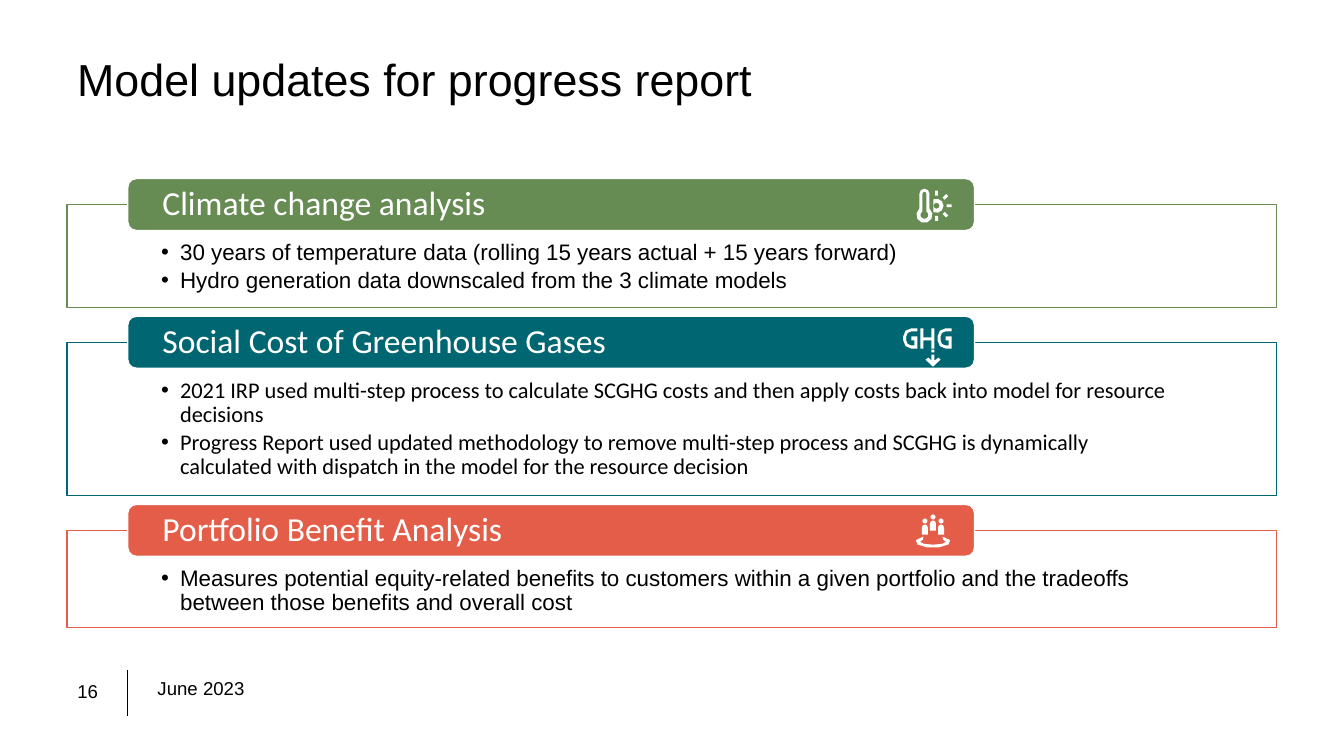
from dataclasses import dataclass
from math import acos, ceil, cos, degrees, radians, sin
from typing import Callable

import pptx
import pptx.dml.color
import pptx.enum.shapes
import pptx.enum.text
import pptx.oxml.ns
import pptx.presentation
import pptx.shapes.autoshape
import pptx.slide
import pptx.util
from lxml import etree

Cm, Pt = pptx.util.Cm, pptx.util.Pt
KIND = pptx.enum.shapes.MSO_SHAPE
ANCHOR = pptx.enum.text.MSO_ANCHOR
LEFT = pptx.enum.text.PP_ALIGN.LEFT
Dots = list[tuple[float, float]]
WHITE, BLACK = "FFFFFF", "000000"

SIDE, WIDE = 1.69, 30.48      # left edge and width of title and frames
TOP, GAP = 5.16, 0.88         # first frame, space between frames
BAR_X, BAR_W, BAR_H = 3.22, 21.34, 1.31
RISE = 0.66                   # how far a bar stands above its frame
ICON_X, UNIT = 23.5, 0.0254   # icon axis, size of one icon step


def color(code: str) -> pptx.dml.color.RGBColor:
    return pptx.dml.color.RGBColor.from_string(code)


def paint(shape: pptx.shapes.autoshape.Shape, fill: str = "", line: str = "") -> None:
    shape.shadow.inherit = False
    if fill:
        shape.fill.solid()
        shape.fill.fore_color.rgb = color(fill)
    else:
        shape.fill.background()
    if line:
        shape.line.color.rgb = color(line)
        shape.line.width = Pt(1)
    else:
        shape.line.fill.background()


def write(shape: pptx.shapes.autoshape.Shape, text: str, size: float, font: str = "Arial",
          ink: str = BLACK, dots: bool = False, after: float = 0, space: float = 0.9) -> None:
    frame = shape.text_frame
    frame.word_wrap = True
    frame.text = text
    for para in frame.paragraphs:
        if dots:
            props = para._p.get_or_add_pPr()
            props.set("marL", str(Cm(0.48)))
            props.set("indent", str(-Cm(0.48)))
            etree.SubElement(props, pptx.oxml.ns.qn("a:buFont")).set("typeface", "Arial")
            etree.SubElement(props, pptx.oxml.ns.qn("a:buChar")).set("char", "•")
        para.alignment = LEFT
        para.line_spacing = space
        para.space_after = Pt(after)
        for run in para.runs:
            run.font.size = Pt(size)
            run.font.name = font
            run.font.color.rgb = color(ink)


def inset(shape: pptx.shapes.autoshape.Shape, side: float, top: float, base: float) -> None:
    frame = shape.text_frame
    frame.margin_left = frame.margin_right = Cm(side)
    frame.margin_top, frame.margin_bottom = Cm(top), Cm(base)


# Icon tools: places are icon steps from the icon axis and the bar top
def arc(x: float, y: float, wide: float, high: float, start: float, end: float) -> Dots:
    count = ceil(abs(end - start) / 45)
    turns = [radians(start + (end - start) * i / count) for i in range(count + 1)]
    return [(x + wide * cos(t), y + high * sin(t)) for t in turns]


@dataclass
class Pen:
    slide: pptx.slide.Slide
    top: float

    def form(self, *loops: Dots) -> None:
        paths = [[(Cm(ICON_X + x * UNIT), Cm(self.top + y * UNIT)) for x, y in loop]
                 for loop in loops]
        build = self.slide.shapes.build_freeform(*paths[0][0])
        for i, corners in enumerate(paths):
            if i:
                build.move_to(*corners[0])
            build.add_line_segments(corners[1:], close=True)
        paint(build.convert_to_shape(), WHITE)

    def block(self, kind: KIND, x: float, y: float, wide: float, high: float,
              turn: float = 0) -> None:
        """Place a preset shape by its centre."""
        shape = self.slide.shapes.add_shape(
            kind, Cm(ICON_X + (x - wide / 2) * UNIT), Cm(self.top + (y - high / 2) * UNIT),
            Cm(wide * UNIT), Cm(high * UNIT))
        shape.rotation = turn
        paint(shape, WHITE)


def draw_heat(pen: Pen) -> None:
    x, y = 4, 27
    for turn in range(-90, 91, 45):
        pen.block(KIND.RECTANGLE, x + 12.5 * cos(radians(turn)),
                  y + 12.5 * sin(radians(turn)), 5, 3, turn)
    pen.form(arc(x, y, 7, 7, -115, 115) + arc(x, y, 3, 3, 180, -180))

    def tube(stem: float, bulb: float) -> Dots:
        neck = degrees(acos(stem / bulb))
        return arc(-8, 15, stem, stem, 180, 360) + arc(-8, 36, bulb, bulb, -neck, 180 + neck)

    pen.form(tube(5, 8), tube(2, 4))


def draw_gas(pen: Pen) -> None:
    top = 12
    for x in (-29, 5):
        mid = x + 8
        pen.form([(x + 14, top), (x + 14, top + 3)]
                 + arc(mid, top + 8, 5, 5, 270, 180) + arc(mid, top + 12, 5, 5, 180, 90)
                 + [(x + 11, top + 17), (x + 11, top + 12), (mid, top + 12), (mid, top + 8),
                    (x + 14, top + 8), (x + 14, top + 20)]
                 + arc(mid, top + 12, 8, 8, 90, 180) + arc(mid, top + 8, 8, 8, 180, 270))
    pen.form([(-12, 12), (-9, 12), (-9, 21), (-1, 21), (-1, 12), (2, 12),
              (2, 32), (-1, 32), (-1, 24), (-9, 24), (-9, 32), (-12, 32)])
    pen.block(KIND.RECTANGLE, 0.5, 34.5, 3, 3)
    pen.form([(2, 44), (2, 38), (-1, 38), (-1, 44), (-4, 41), (-7, 43),
              (0.5, 50), (8, 43), (6, 41)])


def draw_crowd(pen: Pen) -> None:
    pen.form(arc(0.5, 37, 17.5, 6, -57, 237) + arc(0.5, 37, 13, 3, 220, -40))
    for x, y in ((8.5, 16.5), (0.5, 12.5), (-7.5, 16.5)):
        pen.block(KIND.OVAL, x, y, 5, 5)
        pen.form(arc(x, y + 6.5, 3, 3, 180, 360) + [(x + 3, y + 13.5), (x - 3, y + 13.5)])


@dataclass
class Panel:
    head: str
    points: list[str]
    high: float
    hue: str
    font: str
    icon: Callable[[Pen], None]


PANELS = [
    Panel("Climate change analysis",
          ["30 years of temperature data (rolling 15 years actual + 15 years forward)",
           "Hydro generation data downscaled from the 3 climate models"],
          2.59, "668B53", "Arial", draw_heat),
    Panel("Social Cost of Greenhouse Gases",
          ["2021 IRP used multi-step process to calculate SCGHG costs and then apply costs "
           "back into model for resource decisions",
           "Progress Report used updated methodology to remove multi-step process and SCGHG "
           "is dynamically calculated with dispatch in the model for the resource decision"],
          3.86, "006671", "Calibri", draw_gas),
    Panel("Portfolio Benefit Analysis",
          ["Measures potential equity-related benefits to customers within a given portfolio "
           "and the tradeoffs between those benefits and overall cost"],
          2.45, "E45D48", "Arial", draw_crowd),
]


def draw_panel(slide: pptx.slide.Slide, panel: Panel, top: float) -> None:
    frame = slide.shapes.add_shape(KIND.RECTANGLE, Cm(SIDE), Cm(top), Cm(WIDE), Cm(panel.high))
    paint(frame, line=panel.hue)
    inset(frame, 2.37, 0.92, 0.3)
    frame.text_frame.vertical_anchor = ANCHOR.TOP
    write(frame, "\n".join(panel.points), 16, panel.font, dots=True, after=2.5)

    bar = slide.shapes.add_shape(KIND.ROUNDED_RECTANGLE, Cm(BAR_X), Cm(top - RISE),
                                 Cm(BAR_W), Cm(BAR_H))
    paint(bar, panel.hue, WHITE)
    inset(bar, 0.81, 0, 0)
    bar.text_frame.vertical_anchor = ANCHOR.MIDDLE
    write(bar, panel.head, 24, "Calibri", WHITE)
    panel.icon(Pen(slide, top - RISE))


def main() -> None:
    deck = pptx.Presentation()
    deck.slide_width, deck.slide_height = Cm(33.87), Cm(19.05)
    slide = deck.slides.add_slide(deck.slide_layouts[5])

    # Title
    title = slide.shapes.title
    title.left, title.top, title.width, title.height = Cm(SIDE), Cm(1.02), Cm(WIDE), Cm(2.11)
    title.text_frame.vertical_anchor = ANCHOR.MIDDLE
    write(title, "Model updates for progress report", 32)

    # Panels
    top = TOP
    for panel in PANELS:
        draw_panel(slide, panel, top)
        top += panel.high + GAP

    # Footer
    for text, left, wide, space in (("16", 1.7, 1.42, 1), ("June 2023", 3.72, 11.71, 0.9)):
        box = slide.shapes.add_textbox(Cm(left), Cm(17), Cm(wide), Cm(0.84))
        write(box, text, 13.3, space=space)
    rule = slide.shapes.add_connector(pptx.enum.shapes.MSO_CONNECTOR.STRAIGHT,
                                      Cm(3.21), Cm(16.89), Cm(3.21), Cm(18.03))
    rule.line.color.rgb = color(BLACK)
    rule.line.width = Pt(0.75)
    etree.SubElement(rule._element.spPr, pptx.oxml.ns.qn("a:effectLst"))

    deck.save("out.pptx")


if __name__ == "__main__":
    main()
